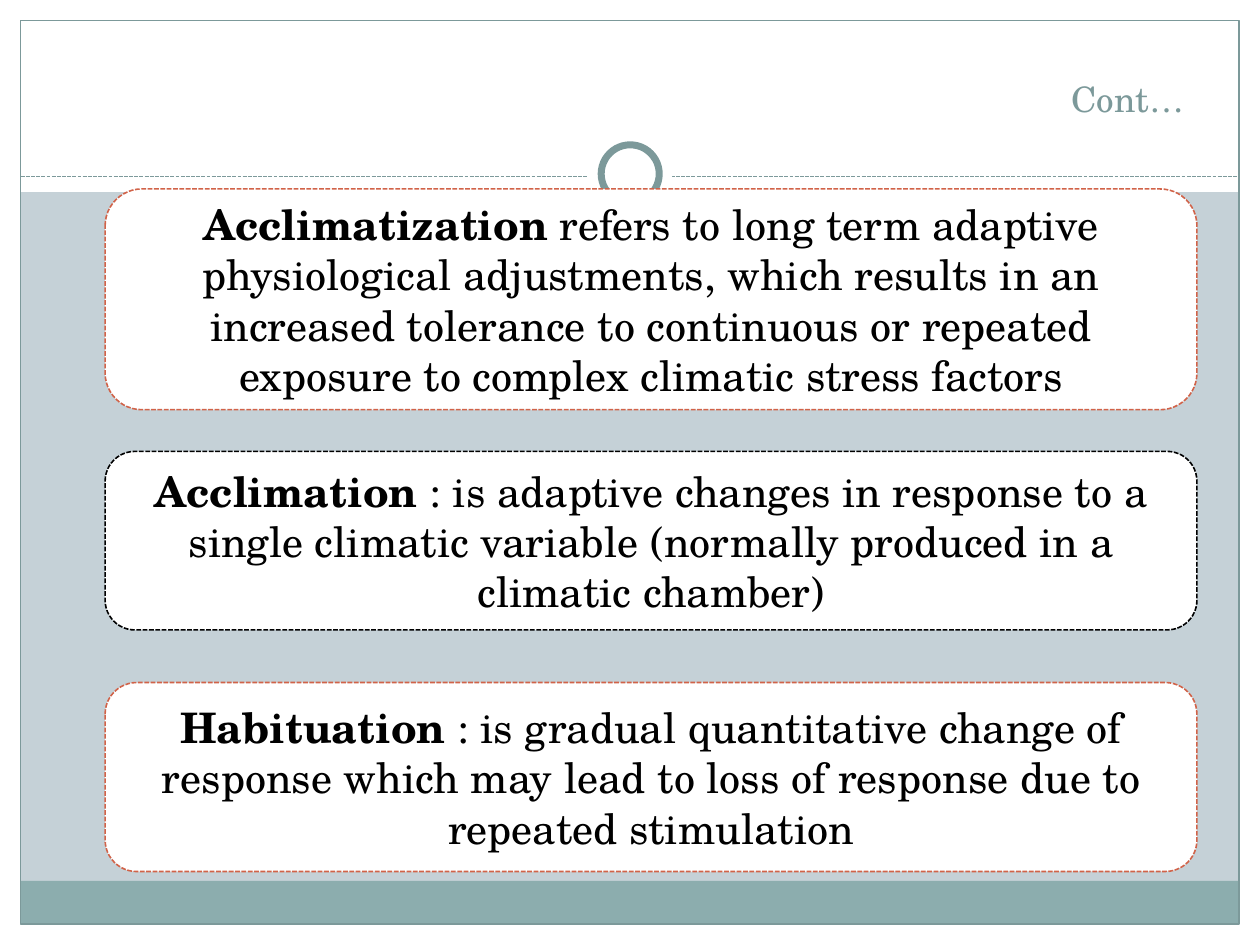
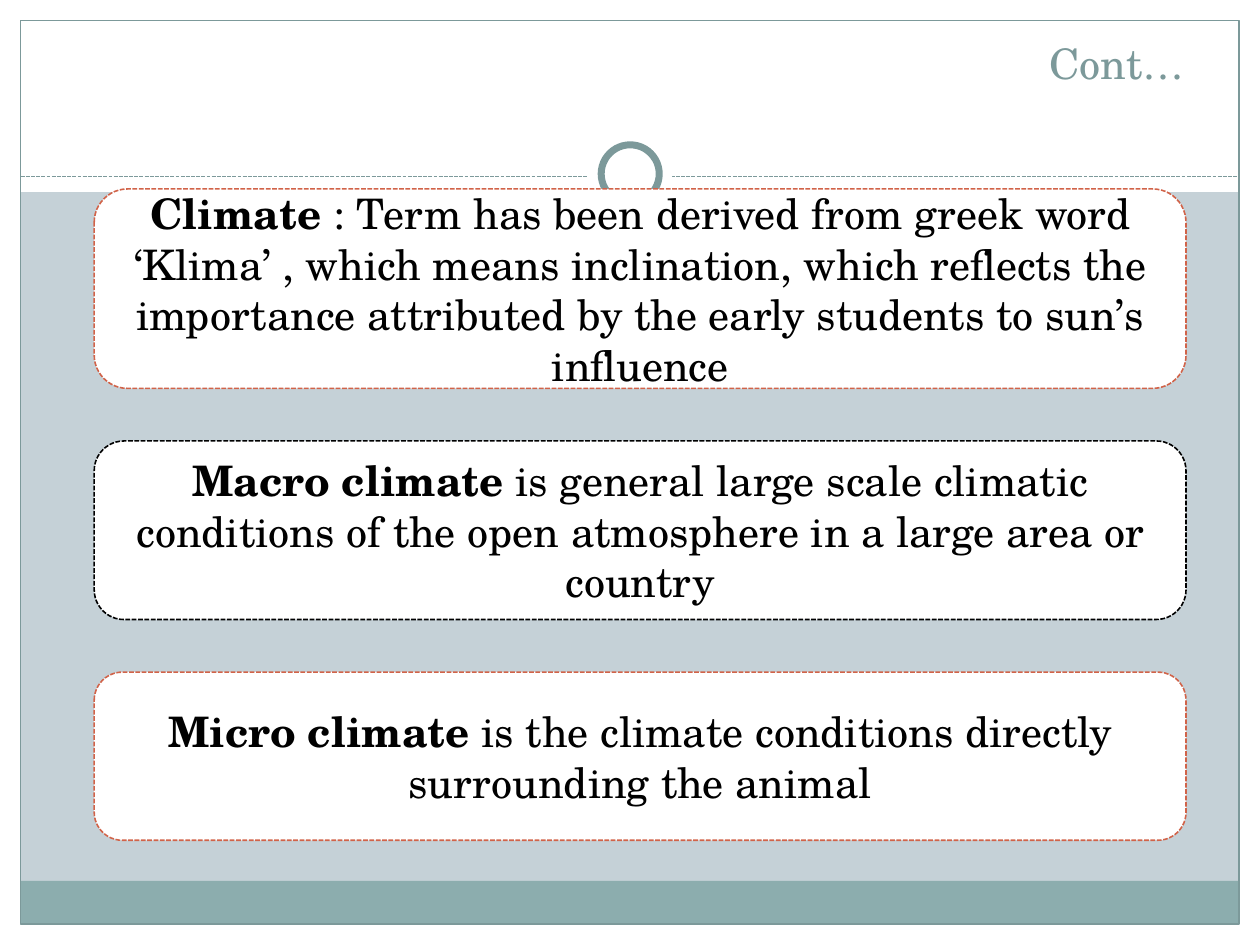
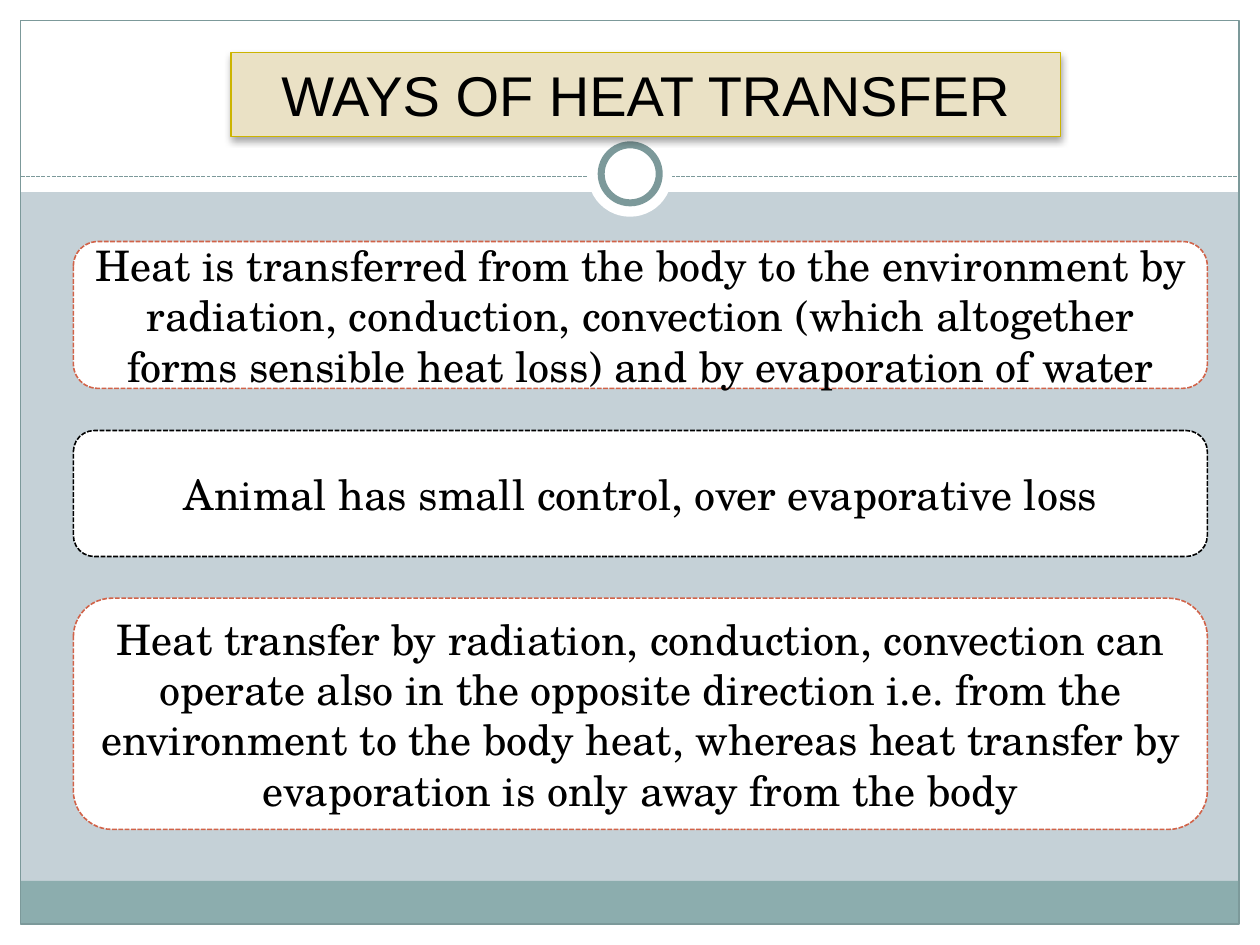
from lxml.etree import SubElement
from pptx import Presentation
from pptx.dml.color import RGBColor
from pptx.enum.dml import MSO_LINE
from pptx.enum.shapes import MSO_CONNECTOR, MSO_SHAPE as SHAPE
from pptx.enum.text import MSO_ANCHOR as ANCHOR, PP_ALIGN as ALIGN
from pptx.oxml.ns import qn
from pptx.util import Cm, Pt

MIST = RGBColor(0xC5, 0xD1, 0xD7)
TEAL = RGBColor(0x7C, 0x99, 0x9A)
BAND = RGBColor(0x8C, 0xAD, 0xAE)
RUST = RGBColor(0xD1, 0x63, 0x49)
SAND = RGBColor(0xEA, 0xE1, 0xC5)
GOLD = RGBColor(0xCC, 0xB4, 0x00)
WHITE = RGBColor(0xFF, 0xFF, 0xFF)
BLACK = RGBColor(0x00, 0x00, 0x00)
SERIF, SANS = "TeX Gyre Schola", "Arial"

WIDTH, HEIGHT = 25.4, 19.05
MARGIN = 0.42
RULE_Y = 3.56

# Frame parts: shape, (left, top, width, height), fill, line colour, line width
FRAME = [
    (SHAPE.RECTANGLE, (0, HEIGHT - MARGIN, WIDTH, MARGIN), WHITE, None, 0),
    (SHAPE.RECTANGLE, (0, 0, WIDTH, 3.87), WHITE, None, 0),
    (SHAPE.RECTANGLE, (0, 0, MARGIN, HEIGHT), WHITE, None, 0),
    (SHAPE.RECTANGLE, (WIDTH - MARGIN, 0, MARGIN, HEIGHT), WHITE, None, 0),
    (SHAPE.RECTANGLE, (MARGIN, 17.76, WIDTH - 2 * MARGIN, 0.87), BAND, None, 0),
    (SHAPE.RECTANGLE, (MARGIN, MARGIN, WIDTH - 2 * MARGIN, HEIGHT - 2 * MARGIN),
     None, TEAL, 0.75),
]
RING = [
    (SHAPE.OVAL, (11.85, 2.67, 1.7, 1.7), WHITE, None, 0),
    (SHAPE.OVAL, (12.12, 2.92, 1.17, 1.17), WHITE, TEAL, 4),
]
CARD_LINES = [RUST, BLACK, RUST]

# Each card: top, height, bold term, explanation
SLIDES = [
    {
        "title": (0.76, 1.78, 20), "left": 2.12, "width": 22.01,
        "cards": [
            (3.81, 4.45, "Acclimatization",
             " refers to long term adaptive physiological adjustments, which "
             "results in an increased tolerance to continuous or repeated "
             "exposure to complex climatic stress factors"),
            (9.1, 3.6, "Acclimation ",
             ": is adaptive changes in response to a single climatic variable "
             "(normally produced in a climatic chamber)"),
            (13.76, 3.81, "Habituation",
             " : is gradual quantitative change of response which may lead to "
             "loss of response due to repeated stimulation"),
        ],
    },
    {
        "title": (0.76, 1.14, 24), "left": 1.9, "width": 22.01,
        "cards": [
            (3.81, 4.02, "Climate ",
             ": Term has been derived from greek word ‘Klima’ , which means "
             "inclination, which reflects the importance attributed by the "
             "early students to sun’s influence"),
            (8.89, 3.6, "Macro climate",
             " is general large scale climatic conditions of the open "
             "atmosphere in a large area or country"),
            (13.55, 3.39, "Micro climate",
             " is the climate conditions directly surrounding the animal"),
        ],
    },
    {
        "heading": "WAYS OF HEAT TRANSFER", "left": 1.48, "width": 22.86,
        "cards": [
            (4.87, 2.96, "",
             "Heat is transferred from the body to the environment by "
             "radiation, conduction, convection (which altogether forms "
             "sensible heat loss) and by evaporation of water"),
            (8.68, 2.54, "", "Animal has small control, over evaporative loss"),
            (12.06, 4.66, "",
             "Heat transfer by radiation, conduction, convection can operate "
             "also in the opposite direction i.e. from the environment to the "
             "body heat, whereas heat transfer by evaporation is only away "
             "from the body"),
        ],
    },
]


def draw(slide, kind, box, fill, line, line_width):
    shape = slide.shapes.add_shape(kind, *[Cm(length) for length in box])
    shape.shadow.inherit = False
    if fill is None:
        shape.fill.background()
    else:
        shape.fill.solid()
        shape.fill.fore_color.rgb = fill
    if line is None:
        shape.line.fill.background()
    else:
        shape.line.color.rgb = line
        shape.line.width = Pt(line_width)
    return shape


def write(shape, runs, size, font=SERIF, color=BLACK, align=ALIGN.CENTER,
          anchor=ANCHOR.MIDDLE):
    frame = shape.text_frame
    frame.word_wrap = True
    frame.vertical_anchor = anchor
    paragraph = frame.paragraphs[0]
    paragraph.alignment = align
    for text, bold in runs:
        run = paragraph.add_run()
        run.text = text
        run.font.name = font
        run.font.size = Pt(size)
        run.font.bold = bold
        run.font.color.rgb = color


deck = Presentation()
deck.slide_width, deck.slide_height = Cm(WIDTH), Cm(HEIGHT)

for content in SLIDES:
    slide = deck.slides.add_slide(deck.slide_layouts[6])
    slide.background.fill.solid()
    slide.background.fill.fore_color.rgb = MIST

    # Shared frame, dashed rule and ring
    for part in FRAME:
        draw(slide, *part)
    rule = slide.shapes.add_connector(
        MSO_CONNECTOR.STRAIGHT, Cm(MARGIN), Cm(RULE_Y), Cm(WIDTH - MARGIN), Cm(RULE_Y))
    rule.line.color.rgb = TEAL
    rule.line.width = Pt(0.75)
    rule.line.dash_style = MSO_LINE.SQUARE_DOT
    SubElement(rule._element.spPr, qn("a:effectLst"))
    for part in RING:
        draw(slide, *part)

    # Continuation title
    if "title" in content:
        top, height, size = content["title"]
        title = slide.shapes.add_textbox(Cm(1.27), Cm(top), Cm(22.86), Cm(height))
        write(title, [("Cont…", False)], size, color=TEAL, align=ALIGN.RIGHT,
              anchor=ANCHOR.BOTTOM)

    # Heading plate with a soft shadow
    if "heading" in content:
        plate = draw(slide, SHAPE.RECTANGLE, (4.66, 1.06, 16.72, 1.69), SAND, GOLD, 0.75)
        write(plate, [(content["heading"], False)], 32, font=SANS)
        effects = plate._element.spPr.find(qn("a:effectLst"))
        shadow = SubElement(effects, qn("a:outerShdw"), blurRad=str(Pt(4)),
                            dist=str(Pt(2)), dir="5400000", rotWithShape="0")
        shade = SubElement(shadow, qn("a:srgbClr"), val=str(BLACK))
        SubElement(shade, qn("a:alpha"), val="35000")

    # Definition cards
    for (top, height, term, meaning), line in zip(content["cards"], CARD_LINES):
        box = (content["left"], top, content["width"], height)
        card = draw(slide, SHAPE.ROUNDED_RECTANGLE, box, WHITE, line, 0.9)
        card.line.dash_style = MSO_LINE.SQUARE_DOT
        runs = [(term, True), (meaning, False)] if term else [(meaning, False)]
        write(card, runs, 24)

deck.save("out.pptx")
